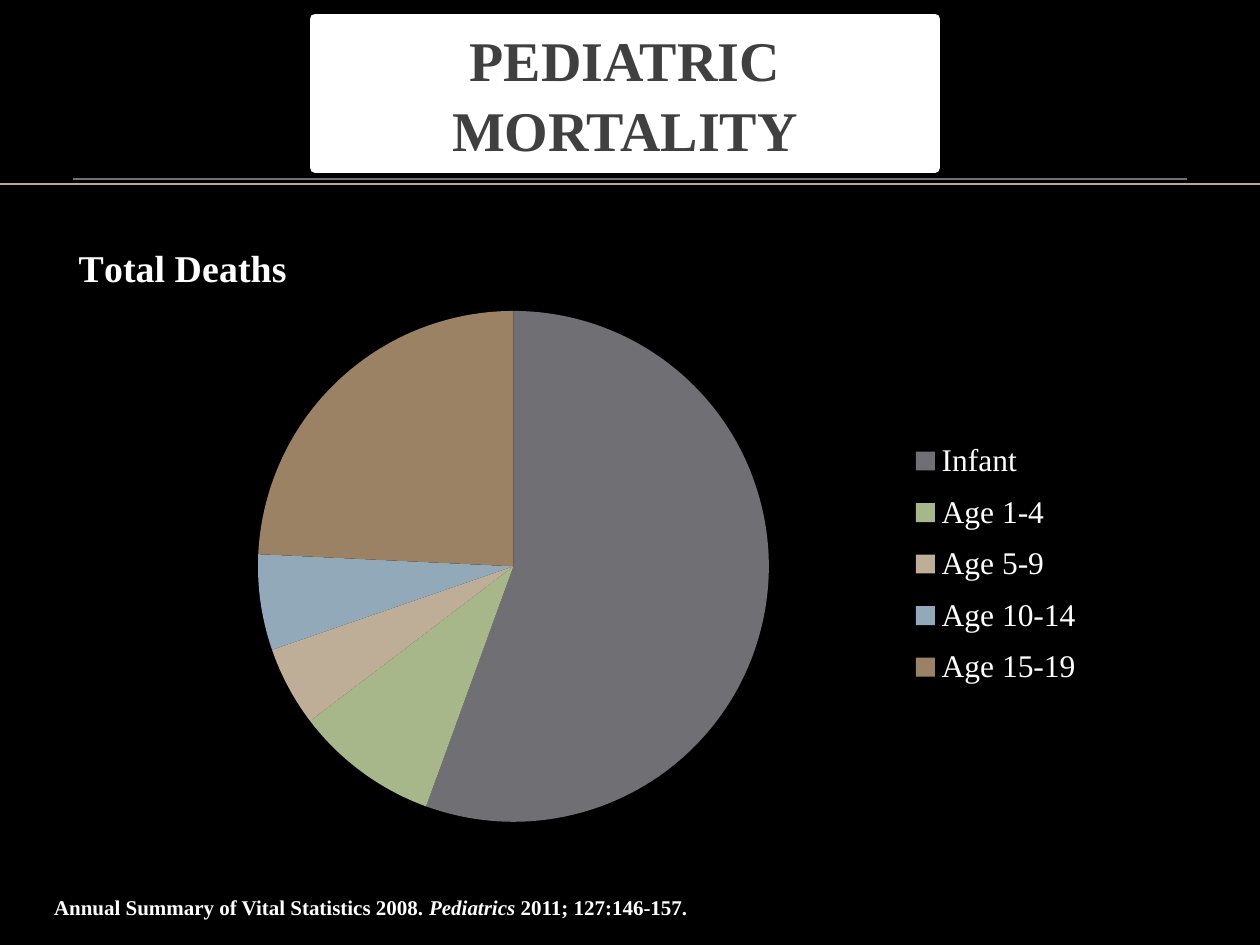
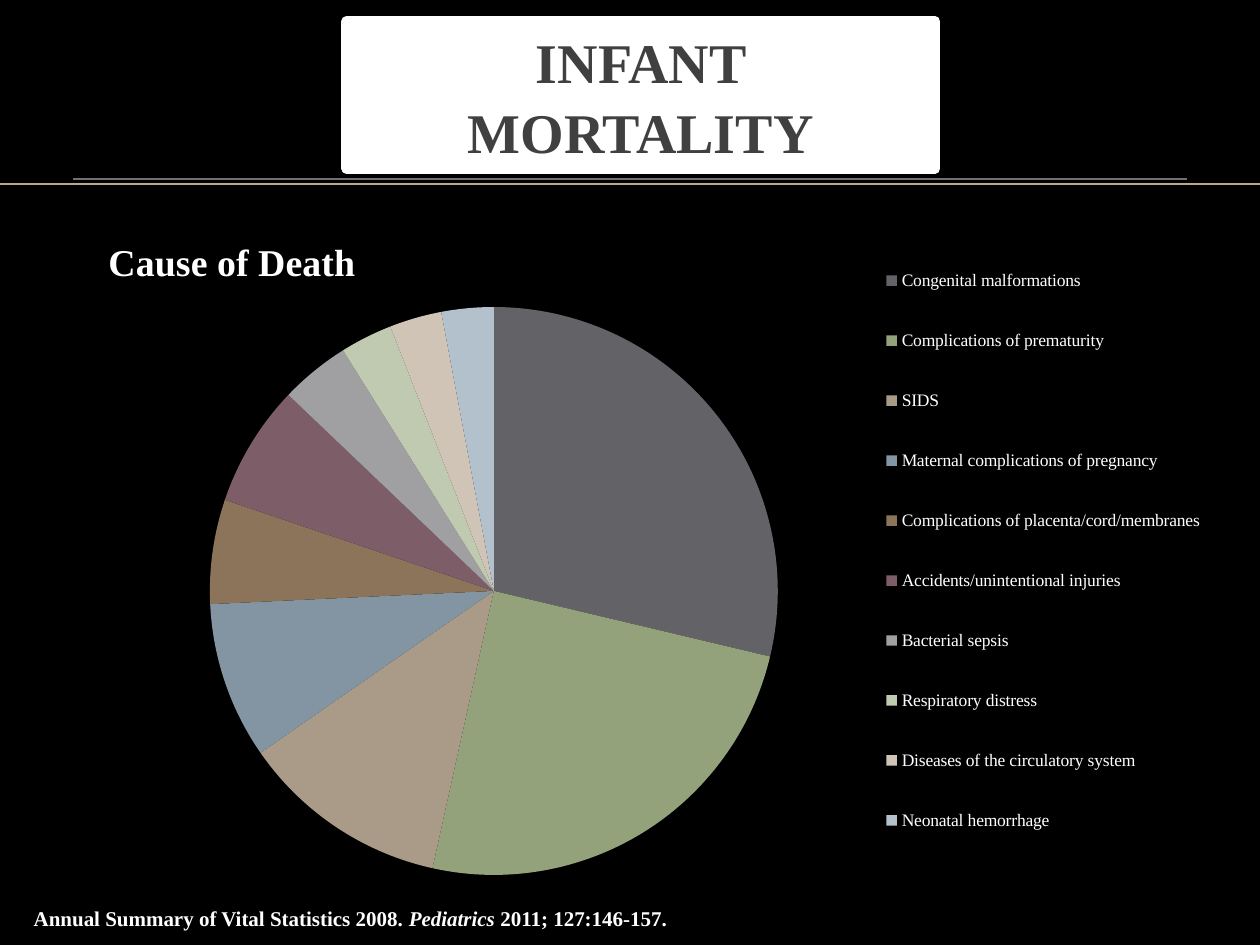
from lxml.etree import SubElement
from pptx import Presentation
from pptx.chart.data import CategoryChartData as ChartData
from pptx.dml.color import RGBColor
from pptx.enum.chart import XL_CHART_TYPE as ChartType, XL_LEGEND_POSITION as LegendPosition
from pptx.enum.shapes import MSO_CONNECTOR as Connector, MSO_SHAPE as Shape
from pptx.enum.text import MSO_ANCHOR as Anchor, PP_ALIGN as Align
from pptx.oxml import parse_xml
from pptx.oxml.ns import nsdecls, qn
from pptx.util import Cm, Pt

FONT = "Times New Roman"
COLOURS = {
    "background": "000000", "text": "FFFFFF", "band": "FFFFFF",
    "heading": "404040", "rule": "6F6F74", "base": "BBAA8A",
}
AGE_COLOURS = ["6F6F74", "A7B789", "BEAE98", "92A9B9", "9C8265"]
CAUSE_COLOURS = ["626267", "94A27B", "A99B87", "8395A2", "8C745A",
                 "7D5D68", "A0A0A3", "C0CAB0", "D0C4B7", "B2C1CC"]
CITATION = [("Annual Summary of Vital Statistics 2008. ", False),
            ("Pediatrics", True), (" 2011; 127:146-157.", False)]

DEATHS_BY_AGE = {"Infant": 55, "Age 1-4": 9, "Age 5-9": 5,
                 "Age 10-14": 6, "Age 15-19": 24}
DEATHS_BY_CAUSE = {
    "Congenital malformations": 29,
    "Complications of prematurity": 25,
    "SIDS": 12,
    "Maternal complications of pregnancy": 9,
    "Complications of placenta/cord/membranes": 6,
    "Accidents/unintentional injuries": 7,
    "Bacterial sepsis": 4,
    "Respiratory distress": 3,
    "Diseases of the circulatory system": 3,
    "Neonatal hemorrhage": 3,
}


def rgb(colour):
    return RGBColor.from_string(COLOURS.get(colour, colour))


class Deck:
    """Holds the shared style and the slide being built; lengths are in cm."""

    def __init__(self):
        self.presentation = Presentation()
        self.presentation.slide_width = Cm(25.4)
        self.presentation.slide_height = Cm(19.05)
        backdrop = self.presentation.slide_master.background.fill
        backdrop.solid()
        backdrop.fore_color.rgb = rgb("background")
        self.slide = None

    def new_slide(self):
        self.slide = self.presentation.slides.add_slide(self.presentation.slide_layouts[6])
        self.rule(0, 25.4, 3.71, "base", 1)

    def style(self, font, size, colour, bold=False, italic=False):
        font.name, font.size = FONT, Pt(size)
        font.bold, font.italic = bold, italic
        font.color.rgb = rgb(colour)

    def rule(self, start, end, y, colour, width):
        rule = self.slide.shapes.add_connector(
            Connector.STRAIGHT, Cm(start), Cm(y), Cm(end), Cm(y))
        rule.line.color.rgb = rgb(colour)
        rule.line.width = Pt(width)
        SubElement(rule._element.spPr, qn("a:effectLst"))

    def heading(self, text, box):
        band = self.slide.shapes.add_shape(Shape.RECTANGLE, *map(Cm, box))
        band.shadow.inherit = False
        band.fill.solid()
        band.fill.fore_color.rgb = rgb("band")
        band.line.color.rgb = rgb("band")
        band.line.width = Pt(6)
        frame = band.text_frame
        frame.text = text
        frame.word_wrap = True
        frame.vertical_anchor = Anchor.MIDDLE
        frame.margin_left = frame.margin_right = Cm(0.5)
        line = frame.paragraphs[0]
        line.alignment = Align.CENTER
        line.space_before = Pt(4)
        line.line_spacing = 1.04
        self.style(line.runs[0].font, 32, "heading", bold=True)
        self.rule(23.93, 1.47, 3.61, "rule", 0.75)

    def citation(self, left, top):
        source = self.slide.shapes.add_textbox(Cm(left), Cm(top), Cm(16.08), Cm(0.76))
        source.text_frame.word_wrap = True
        for text, italic in CITATION:
            run = source.text_frame.paragraphs[0].add_run()
            run.text = text
            self.style(run.font, 12, "text", bold=True, italic=italic)

    def place(self, part, index, chart_box, part_box, inner=False):
        """Pin a chart part to slide coordinates, as fractions of the chart."""
        for automatic in part.findall(qn("c:layout")):
            part.remove(automatic)
        layout = parse_xml(f"<c:layout {nsdecls('c')}><c:manualLayout/></c:layout>")
        manual = layout[0]
        if inner:
            SubElement(manual, qn("c:layoutTarget"), val="inner")
        for axis in "xy":
            SubElement(manual, qn(f"c:{axis}Mode"), val="edge")
        left, top, width, height = chart_box
        scales = [(left, width), (top, height), (0, width), (0, height)]
        for key, value, (start, extent) in zip("xywh", part_box, scales):
            SubElement(manual, qn(f"c:{key}"), val=f"{(value - start) / extent:.4f}")
        part.insert(index, layout)

    def pie(self, title, values, colours, box, title_at, pie_box, legend_box, legend_size):
        data = ChartData()
        data.categories = list(values)
        data.add_series(title, list(values.values()))
        chart = self.slide.shapes.add_chart(ChartType.PIE, *map(Cm, box), data).chart
        self.style(chart.font, 18, "text")

        # Chart title
        chart.has_title = True
        caption = chart.chart_title.text_frame
        caption.text = title
        self.style(caption.paragraphs[0].runs[0].font, 21.6, "text", bold=True)
        self.place(chart.chart_title._element, 1, box, title_at)

        # Legend
        chart.has_legend = True
        chart.legend.position = LegendPosition.RIGHT
        chart.legend.include_in_layout = False
        self.style(chart.legend.font, legend_size, "text")
        self.place(chart.legend._element, 1, box, legend_box)

        # Slices
        plot = chart.plots[0]
        plot.vary_by_categories = True
        for index, colour in enumerate(colours):
            slice_format = plot.series[0].points[index].format
            slice_format.fill.solid()
            slice_format.fill.fore_color.rgb = rgb(colour)
            slice_format.line.fill.background()
        self.place(chart._chartSpace.chart.plotArea, 0, box, pie_box, inner=True)


def main():
    deck = Deck()

    # Deaths by age group
    deck.new_slide()
    deck.pie("Total Deaths", DEATHS_BY_AGE, AGE_COLOURS,
             box=(0.43, 4.24, 23.7, 12.7), title_at=(1.45, 4.78),
             pie_box=(5.2, 6.27, 10.3, 10.3),
             legend_box=(18.25, 8.6, 3.65, 5.55), legend_size=18)
    deck.heading("PEDIATRIC MORTALITY", (6.35, 0.38, 12.5, 3))
    deck.citation(0.84, 17.91)

    # Infant deaths by cause
    deck.new_slide()
    deck.pie("Cause of Death", DEATHS_BY_CAUSE, CAUSE_COLOURS,
             box=(1.27, 4.11, 24.13, 13.87), title_at=(2.05, 4.65),
             pie_box=(4.23, 6.19, 11.45, 11.45),
             legend_box=(17.7, 4.65, 6.65, 12.9), legend_size=10)
    deck.heading("INFANT MORTALITY", (6.99, 0.43, 11.86, 2.97))
    deck.citation(0.43, 18.14)

    deck.presentation.save("out.pptx")


if __name__ == "__main__":
    main()
